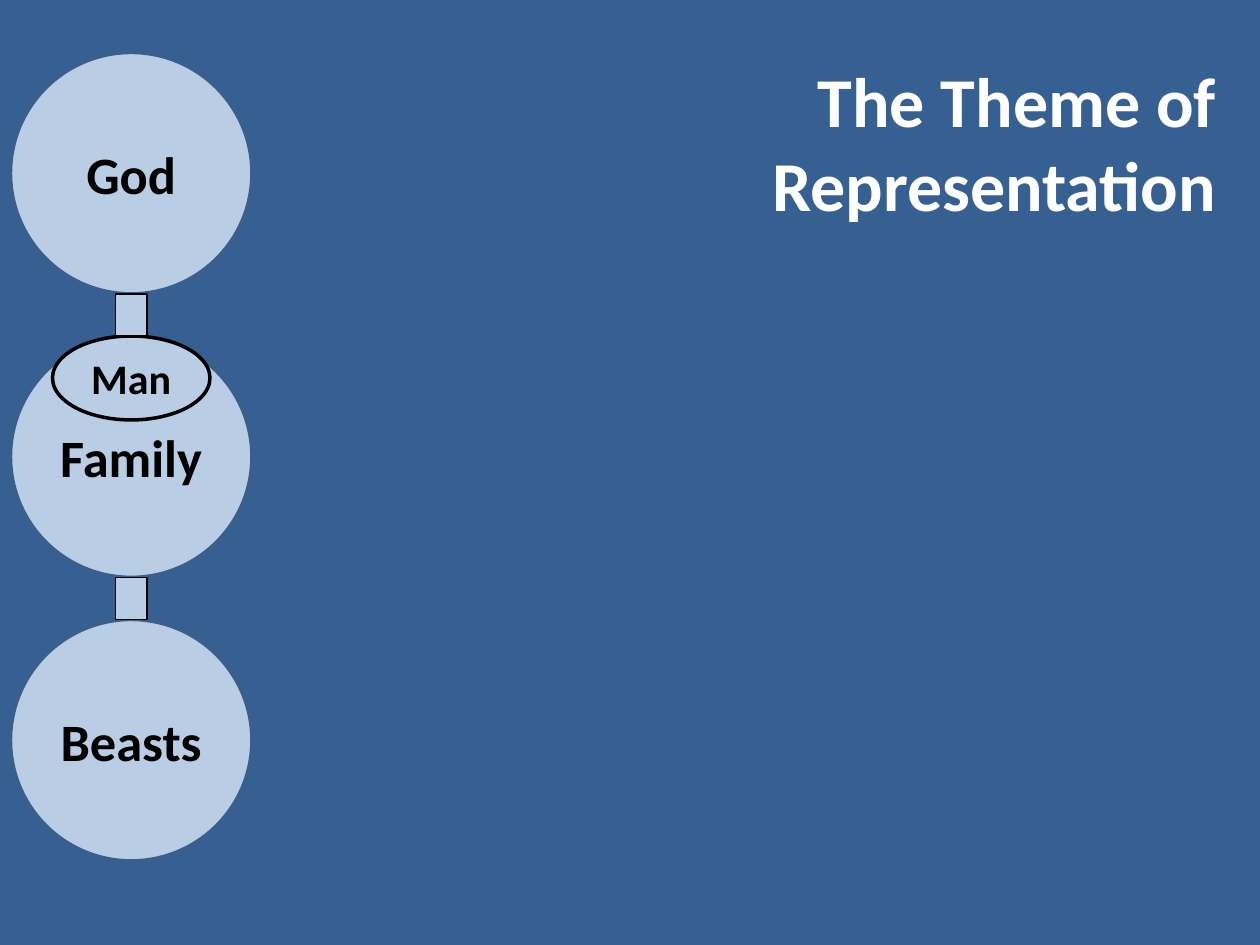
from dataclasses import dataclass

from pptx import Presentation
from pptx.dml.color import RGBColor
from pptx.enum import shapes, text
from pptx.util import Pt


@dataclass(frozen=True)
class Theme:
    font: str = "Calibri"
    background: str = "376092"
    fill: str = "B9CDE5"
    circle_line: str = "3A5F8C"
    ink: str = "000000"
    title_color: str = "FFFFFF"
    title_size: int = 40
    circle_size: int = 30
    inner_size: int = 24


class SlideBuilder:
    """Holds the theme and the current slide; all lengths are in points."""

    def __init__(self, slide, theme):
        self.slide = slide
        self.theme = theme

    def background(self):
        fill = self.slide.background.fill
        fill.solid()
        fill.fore_color.rgb = RGBColor.from_string(self.theme.background)

    def add_label(self, shape, words, size, color, alignment, anchor):
        frame = shape.text_frame
        frame.word_wrap = True
        frame.vertical_anchor = anchor
        paragraph = frame.paragraphs[0]
        paragraph.alignment = alignment
        run = paragraph.add_run()
        run.text = words
        run.font.name = self.theme.font
        run.font.size = Pt(size)
        run.font.bold = True
        run.font.color.rgb = RGBColor.from_string(color)

    def title(self, words, left, top, width, height):
        title = self.slide.shapes.title
        title.left, title.top = Pt(left), Pt(top)
        title.width, title.height = Pt(width), Pt(height)
        self.add_label(title, words, self.theme.title_size, self.theme.title_color,
                       text.PP_ALIGN.RIGHT, text.MSO_ANCHOR.TOP)
        title.text_frame.auto_size = text.MSO_AUTO_SIZE.SHAPE_TO_FIT_TEXT

    def box(self, kind, left, top, width, height, line_color, line_width):
        shape = self.slide.shapes.add_shape(
            kind, Pt(left), Pt(top), Pt(width), Pt(height))
        shape.shadow.inherit = False
        shape.fill.solid()
        shape.fill.fore_color.rgb = RGBColor.from_string(self.theme.fill)
        shape.line.color.rgb = RGBColor.from_string(line_color)
        shape.line.width = Pt(line_width)
        return shape

    def ellipse(self, words, left, top, width, height, line_color, size):
        shape = self.box(shapes.MSO_SHAPE.OVAL, left, top, width, height,
                         line_color, 2)
        self.add_label(shape, words, size, self.theme.ink,
                       text.PP_ALIGN.CENTER, text.MSO_ANCHOR.MIDDLE)

    def link(self, left, top, width, height):
        self.box(shapes.MSO_SHAPE.RECTANGLE, left, top, width, height,
                 self.theme.ink, 0.75)


def main():
    presentation = Presentation()
    presentation.slide_width, presentation.slide_height = Pt(720), Pt(540)
    theme = Theme()
    title_only = presentation.slide_layouts[5]
    builder = SlideBuilder(presentation.slides.add_slide(title_only), theme)
    builder.background()
    builder.title("The Theme of Representation", 366, 29, 336, 104)

    center, first_top, diameter, gap = 75, 30, 138, 24
    labels = ["God", "Family", "Beasts"]
    tops = [first_top + row * (diameter + gap) for row in range(len(labels))]
    for label, top in zip(labels, tops):
        builder.ellipse(label, center - diameter / 2, top, diameter, diameter,
                        theme.circle_line, theme.circle_size)

    man_width, man_height = 90, 48
    builder.ellipse("Man", center - man_width / 2, tops[1], man_width, man_height,
                    theme.ink, theme.inner_size)

    link_width = 18
    for top in tops[:-1]:
        builder.link(center - link_width / 2, top + diameter, link_width, gap)

    presentation.save("out.pptx")


if __name__ == "__main__":
    main()
